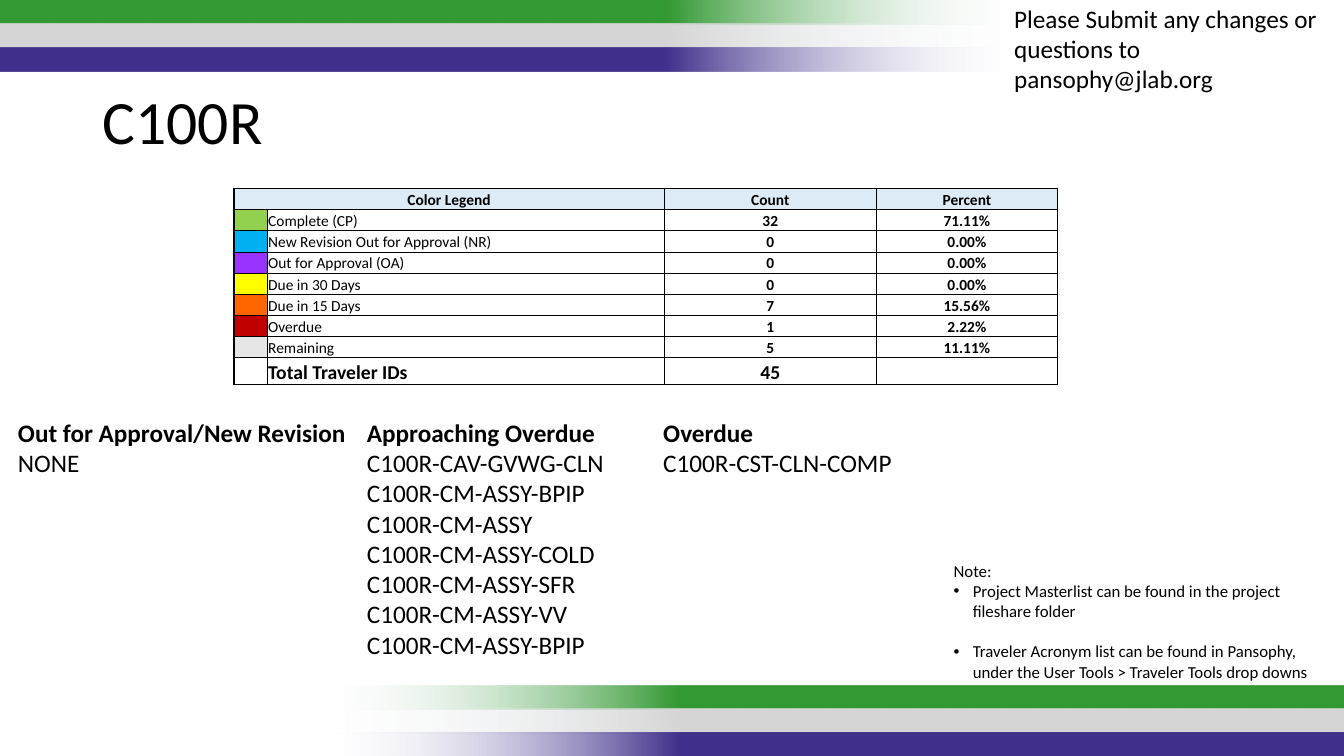
import pptx
import pptx.dml.color
import pptx.enum.shapes
import pptx.enum.text
import pptx.oxml.ns
import pptx.util
from lxml import etree

Inches = pptx.util.Inches
Pt = pptx.util.Pt
ALIGN = pptx.enum.text.PP_ALIGN
ANCHOR = pptx.enum.text.MSO_ANCHOR
qn = pptx.oxml.ns.qn

BLACK = "000000"
BAND_COLORS = ["339933", "D6D6D6", "42318C"]
BAND_GROUPS = [(-0.01, 0, 180), (3.18, 6.8, 0)]
BAND_WIDTH, BAND_HEIGHT, BAND_STEP = 10.17, 0.24, 0.235

HEADER = ("Color Legend", "", "Count", "Percent")
HEADER_FILL = "DDEBF7"
LEGEND = [
    ("92D050", "Complete (CP)", "32", "71.11%"),
    ("00B0F0", "New Revision Out for Approval (NR)", "0", "0.00%"),
    ("9933FF", "Out for Approval (OA)", "0", "0.00%"),
    ("FFFF00", "Due in 30 Days", "0", "0.00%"),
    ("FF6600", "Due in 15 Days", "7", "15.56%"),
    ("C00000", "Overdue", "1", "2.22%"),
    ("E7E6E6", "Remaining", "5", "11.11%"),
]
TOTAL = ("", "Total Traveler IDs", "45", "")
TABLE_LEFT, TABLE_TOP = 2.32, 1.87
COLUMN_WIDTHS = [0.33, 3.94, 2.1, 1.8]
ROW_HEIGHT, TOTAL_HEIGHT = 0.21, 0.27

STATUS_LISTS = [
    ((0.08, 4.09, 3.45, 0.71), "Out for Approval/New Revision", ["NONE"]),
    ((3.54, 4.09, 2.95, 2.52), "Approaching Overdue", [
        "C100R-CAV-GVWG-CLN",
        "C100R-CM-ASSY-BPIP",
        "C100R-CM-ASSY",
        "C100R-CM-ASSY-COLD",
        "C100R-CM-ASSY-SFR",
        "C100R-CM-ASSY-VV",
        "C100R-CM-ASSY-BPIP",
    ]),
    ((6.48, 4.09, 6.03, 0.71), "Overdue", ["C100R-CST-CLN-COMP"]),
]
TITLE = "C100R"
CONTACT = "Please Submit any changes or questions to pansophy@jlab.org"
NOTE_TITLE = "Note:"
NOTES = [
    "Project Masterlist can be found in the project fileshare folder",
    "Traveler Acronym list can be found in Pansophy, under the User Tools > Traveler Tools drop downs",
]


def rgb(color):
    return pptx.dml.color.RGBColor.from_string(color)


def write(frame, text, size=18, bold=False, align=ALIGN.LEFT, bullet=False,
          before=0, line_spacing=None):
    first = frame.paragraphs[0]
    paragraph = frame.add_paragraph() if first.runs else first
    if bullet:
        properties = paragraph._p.get_or_add_pPr()
        properties.set("marL", str(Inches(0.19)))
        properties.set("indent", str(-Inches(0.19)))
        etree.SubElement(properties, qn("a:buFont"), typeface="Arial")
        etree.SubElement(properties, qn("a:buChar"), char="•")
    paragraph.alignment = align
    if before:
        paragraph.space_before = Pt(before)
    if line_spacing:
        paragraph.line_spacing = line_spacing
    if not text:
        etree.SubElement(paragraph._p, qn("a:endParaRPr"), sz=str(size * 100))
        return
    run = paragraph.add_run()
    run.text = text
    run.font.name = "Calibri"
    run.font.size = Pt(size)
    run.font.bold = bold
    run.font.color.rgb = rgb(BLACK)


def add_box(slide, place):
    frame = slide.shapes.add_textbox(*map(Inches, place)).text_frame
    frame.word_wrap = True
    return frame


def add_band(slide, left, top, rotation, color):
    band = slide.shapes.add_shape(
        pptx.enum.shapes.MSO_SHAPE.RECTANGLE,
        *map(Inches, (left, top, BAND_WIDTH, BAND_HEIGHT)))
    band.rotation = rotation
    band.shadow.inherit = False
    band.line.fill.background()
    band.fill.gradient()
    band.fill.gradient_angle = 0
    stops = band._element.spPr.find(".//" + qn("a:gsLst"))
    for stop in list(stops):
        stops.remove(stop)
    for position, stop_color in ((0, "F7FAFD"), (35, color), (100, color)):
        stop = etree.SubElement(stops, qn("a:gs"), pos=str(position * 1000))
        value = etree.SubElement(stop, qn("a:srgbClr"), val=stop_color)
        if position == 0:
            etree.SubElement(value, qn("a:alpha"), val="0")


def set_borders(cell, widths):
    properties = cell._tc.get_or_add_tcPr()
    for side, width in zip("LRTB", widths):
        line = etree.SubElement(properties, qn("a:ln" + side), w=str(Pt(width)))
        fill = etree.SubElement(line, qn("a:solidFill"))
        etree.SubElement(fill, qn("a:srgbClr"), val=BLACK)


def add_legend(slide):
    rows = [HEADER] + [("",) + entry[1:] for entry in LEGEND] + [TOTAL]
    last_row, last_column = len(rows) - 1, len(COLUMN_WIDTHS) - 1
    height = ROW_HEIGHT * last_row + TOTAL_HEIGHT
    table = slide.shapes.add_table(
        len(rows), len(COLUMN_WIDTHS),
        *map(Inches, (TABLE_LEFT, TABLE_TOP, sum(COLUMN_WIDTHS), height))).table
    table.first_row = table.horz_banding = False
    for column, width in zip(table.columns, COLUMN_WIDTHS):
        column.width = Inches(width)
    for r, texts in enumerate(rows):
        table.rows[r].height = Inches(TOTAL_HEIGHT if r == last_row else ROW_HEIGHT)
        for c, text in enumerate(texts):
            cell = table.cell(r, c)
            cell.margin_left = cell.margin_right = cell.margin_top = Inches(0.01)
            cell.margin_bottom = 0
            cell.vertical_anchor = ANCHOR.BOTTOM
            outer_edges = (c == 0, c == last_column, r == 0, r == last_row)
            set_borders(cell, [1 if outer else 0.5 for outer in outer_edges])
            if r == 0:
                color = HEADER_FILL
            else:
                color = LEGEND[r - 1][0] if c == 0 and r < last_row else None
            if color:
                cell.fill.solid()
                cell.fill.fore_color.rgb = rgb(color)
            else:
                cell.fill.background()
            write(cell.text_frame, text,
                  size=14 if r == last_row and text else 11,
                  bold=r in (0, last_row) or c > 1,
                  align=ALIGN.CENTER if r == 0 or c > 1 else ALIGN.LEFT)
    table.cell(0, 0).merge(table.cell(0, 1))


def main():
    presentation = pptx.Presentation()
    presentation.slide_width = Inches(13.33)
    presentation.slide_height = Inches(7.5)
    slide = presentation.slides.add_slide(presentation.slide_layouts[6])

    for left, top, rotation in BAND_GROUPS:
        for index, color in enumerate(BAND_COLORS):
            add_band(slide, left, top + index * BAND_STEP, rotation, color)

    write(add_box(slide, (0.92, 0.86, 11.5, 0.99)), TITLE, size=44, line_spacing=0.9)
    add_legend(slide)

    for place, heading, travelers in STATUS_LISTS:
        frame = add_box(slide, place)
        write(frame, heading, bold=True)
        for traveler in travelers:
            write(frame, traveler)

    write(add_box(slide, (9.96, -0.02, 3.38, 1.01)), CONTACT)

    note = add_box(slide, (9.36, 5.51, 3.97, 1.31))
    write(note, NOTE_TITLE, size=12)
    for index, text in enumerate(NOTES):
        write(note, text, size=12, bullet=True, before=14.5 * index)

    presentation.save("out.pptx")


if __name__ == "__main__":
    main()
